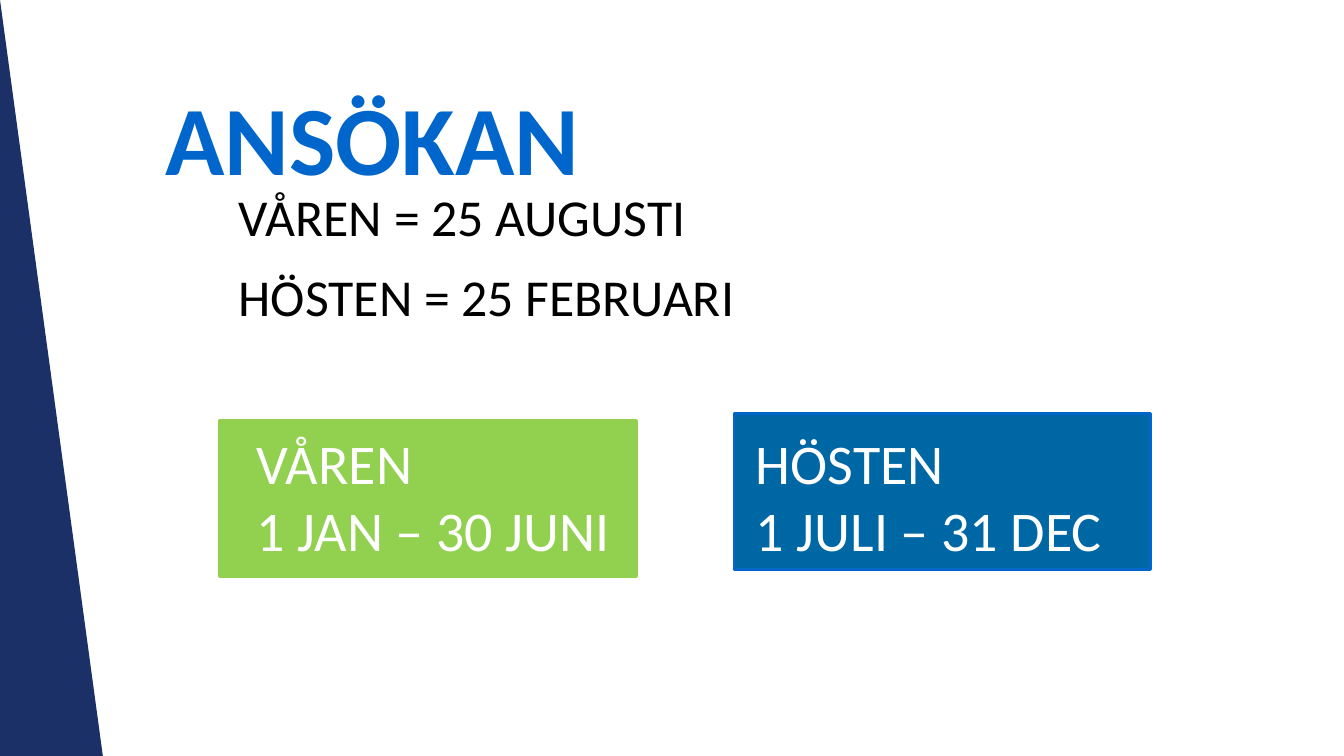
import pptx
import pptx.dml.color
import pptx.enum.shapes
import pptx.enum.text
import pptx.util

Inches = pptx.util.Inches
Pt = pptx.util.Pt
RGBColor = pptx.dml.color.RGBColor
MSO_SHAPE = pptx.enum.shapes.MSO_SHAPE

NAVY = RGBColor(0x1B, 0x30, 0x66)
BLUE = RGBColor(0x00, 0x66, 0xCC)
TEAL = RGBColor(0x00, 0x67, 0xA5)
GREEN = RGBColor(0x92, 0xD0, 0x50)
BLACK = RGBColor(0, 0, 0)
WHITE = RGBColor(0xFF, 0xFF, 0xFF)
FONT = "Calibri"


def add_block(s, preset, left, top, width, height, fill, line=None):
    sp = s.shapes.add_shape(preset, Inches(left), Inches(top), Inches(width), Inches(height))
    sp.shadow.inherit = False
    sp.fill.solid()
    sp.fill.fore_color.rgb = fill
    if line is None:
        sp.line.fill.background()
    else:
        sp.line.color.rgb = line
        sp.line.width = Pt(2)


def add_text(s, lines, left, top, width, height, *, size, color, bold=False,
             line_spacing=None, space_before=0, inset_left=0.1, inset_top=0.05):
    sp = s.shapes.add_textbox(Inches(left), Inches(top), Inches(width), Inches(height))
    tf = sp.text_frame
    tf.word_wrap = True
    tf.vertical_anchor = pptx.enum.text.MSO_ANCHOR.TOP
    tf.margin_left = Inches(inset_left)
    tf.margin_top = Inches(inset_top)
    for i, line in enumerate(lines):
        p = tf.add_paragraph() if i else tf.paragraphs[0]
        if line_spacing:
            p.line_spacing = line_spacing
        if i and space_before:
            p.space_before = Pt(space_before)
        r = p.add_run()
        r.text = line
        r.font.name = FONT
        r.font.size = Pt(size)
        r.font.bold = bold
        r.font.color.rgb = color


def main():
    prs = pptx.Presentation()
    prs.slide_width = Inches(13.33)
    prs.slide_height = Inches(7.5)
    s = prs.slides.add_slide(prs.slide_layouts[6])

    # Side wedge
    add_block(s, MSO_SHAPE.RIGHT_TRIANGLE, 0, 0, 1.02, 7.5, NAVY)

    # Title and application deadlines
    add_text(s, ["ANSÖKAN"], 1.52, 0.68, 11.13, 0.66, size=70, color=BLUE,
             bold=True, inset_left=0.12, inset_top=0.09)
    add_text(s, ["VÅREN = 25 AUGUSTI", "HÖSTEN = 25 FEBRUARI"], 2.27, 1.64, 10.26, 1.64,
             size=37, color=BLACK, line_spacing=1.2, space_before=3.9, inset_top=0.07)

    # Term boxes: box left, box top, text left, fill, line, text
    terms = [
        (2.18, 4.17, 2.45, GREEN, GREEN, ["VÅREN", "1 JAN – 30 JUNI"]),
        (7.28, 4.1, 7.4, TEAL, BLUE, ["HÖSTEN", "1 JULI – 31 DEC"]),
    ]
    for left, top, text_left, fill, line, text in terms:
        add_block(s, MSO_SHAPE.RECTANGLE, left, top, 4.13, 1.55, fill, line)
        add_text(s, text, text_left, 4.2, 3.86, 1.45, size=40, color=WHITE)

    prs.save("out.pptx")


if __name__ == "__main__":
    main()
